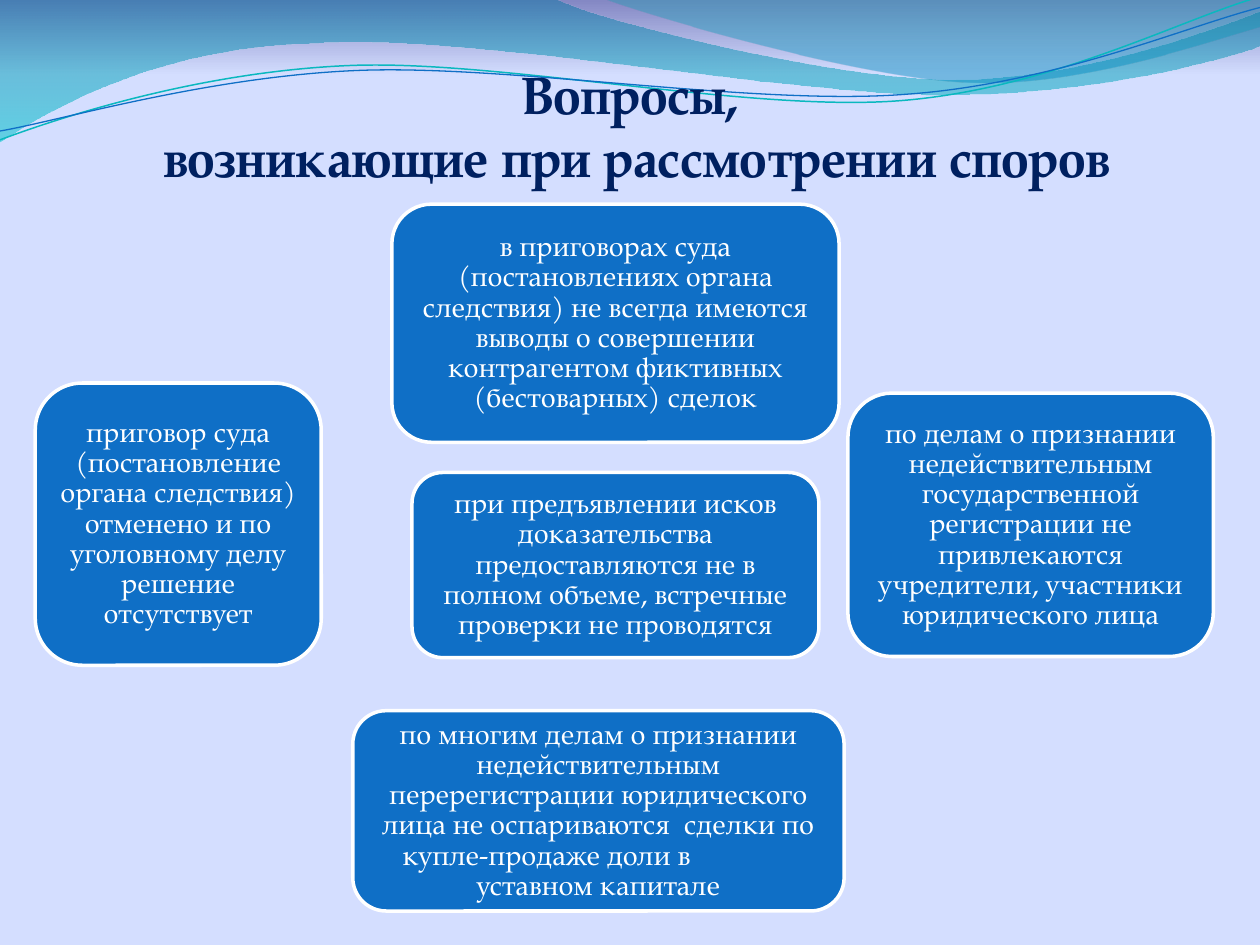
import math

import pptx
import pptx.dml.color
import pptx.enum.shapes
import pptx.enum.text
import pptx.oxml
import pptx.oxml.ns
import pptx.util

Inches = pptx.util.Inches
qn = pptx.oxml.ns.qn
SPACE = pptx.oxml.ns.nsdecls("a")
FONT = "TeX Gyre Pagella"
NAVY, BLUE, TEAL, WHITE = "002060", "0F6FC6", "0AB8BF", "FFFFFF"
TILT = 357.3
SKY = [(0, "8488C4", 100), (8, "D4DEFF", 100), (100, "D4DEFF", 100)]
BANDS = [
    ([(0, 0)], [(4.4, -0.01)],
     [(4.76, 0.17), (6.64, 0.63), (7.58, 0.63)],
     [(8.53, 0.63), (9.58, 0.26), (10, 0.09)], [(10.01, 0.36)],
     [(9.83, 0.44), (8.7, 0.76), (7.46, 0.75)],
     [(6.22, 0.75), (3.82, 0.28), (2.57, 0.34)],
     [(1.29, 0.36), (0.46, 0.83), (-0.01, 1.13)]),
    ([(4.79, -0.01)],
     [(5.09, 0.11), (6.82, 0.62), (7.69, 0.65)],
     [(8.56, 0.69), (9.61, 0.32), (10, 0.21)], [(10, 0)]),
]
SHADES = [
    [(0, "0074A1", 45), (100, "00C6CF", 55)],
    [(0, "00A1A9", 30), (80, "008BBF", 45)],
]
LINES = [
    (([(0, 1.11)],
      [(0.48, 0.93), (1.58, 0.57), (2.77, 0.52)],
      [(3.95, 0.47), (5.93, 0.89), (7.13, 0.8)],
      [(8.33, 0.71), (9.38, 0.15), (9.98, -0.02)]),
     (4.99, 0.58), TEAL, 0.85),
    (([(0, 1.04)],
      [(0.47, 0.96), (1.64, 0.61), (2.83, 0.56)],
      [(4.03, 0.51), (5.97, 0.84), (7.17, 0.75)],
      [(8.36, 0.67), (9.41, 0.21), (10, 0.06)]),
     (5, 0.59), BLUE, 0.75),
]
CARDS = [
    ((3.11, 1.62, 3.55, 1.89),
     "в приговорах суда (постановлениях органа следствия) не всегда имеются "
     "выводы о совершении контрагентом фиктивных (бестоварных) сделок"),
    ((6.73, 3.12, 2.9, 2.09),
     "по делам о признании недействительным государственной регистрации не "
     "привлекаются учредители, участники юридического лица"),
    ((3.27, 3.75, 3.23, 1.47),
     "при предъявлении исков доказательства предоставляются не в полном "
     "объеме, встречные проверки не проводятся"),
    ((2.8, 5.64, 3.9, 1.59),
     "по многим делам о признании недействительным перерегистрации "
     "юридического лица не оспариваются  сделки по купле-продаже доли в "
     "\tуставном капитале"),
    ((0.28, 3.04, 2.27, 2.24),
     "приговор суда (постановление органа следствия) отменено и по "
     "уголовному делу решение отсутствует"),
]


def tint(code):
    """Turn a hex string into a colour."""
    return pptx.dml.color.RGBColor.from_string(code)


def apply(item, **values):
    """Set each given format value on the item."""
    for name, value in values.items():
        setattr(item, name, value)


def shade(node, fill, stops):
    """Give a fill a downward gradient of (percent, colour, opacity) stops."""
    fill.gradient()
    fill.gradient_angle = 270
    group = next(node.iter(qn("a:gsLst")))
    for old in list(group):
        group.remove(old)
    for place, code, alpha in stops:
        group.append(pptx.oxml.parse_xml(
            f'<a:gs {SPACE} pos="{place * 1000}"><a:srgbClr val="{code}">'
            f'<a:alpha val="{alpha * 1000}"/></a:srgbClr></a:gs>'))


def stroke(shape, code, width):
    """Give a shape its outline."""
    shape.line.color.rgb = tint(code)
    shape.line.width = pptx.util.Pt(width)


def turn(route, pivot, angle):
    """Rotate every point of a route about a pivot."""
    cos, sin = math.cos(math.radians(angle)), math.sin(math.radians(angle))
    px, py = pivot
    return [[(px + (x - px) * cos - (y - py) * sin,
              py + (x - px) * sin + (y - py) * cos) for x, y in part]
            for part in route]


def bend(shape, route):
    """Join each three straight segments of a route into one Bezier curve."""
    steps = iter(list(shape._element.iter(qn("a:lnTo"))))
    for part in route[1:]:
        group = [next(steps) for point in part]
        if len(group) == 3:
            curve = pptx.oxml.parse_xml(f"<a:cubicBezTo {SPACE}/>")
            group[0].addprevious(curve)
            for step in group:
                curve.append(step[0])
                step.getparent().remove(step)


def outline(slide, box, route, close):
    """Draw a route from the top left corner of the box."""
    points = [(Inches(box[0] + x), Inches(box[1] + y))
              for part in route for x, y in part]
    pen = slide.shapes.build_freeform(*points[0])
    pen.add_line_segments(points[1:], close=close)
    shape = pen.convert_to_shape()
    bend(shape, route)
    shape.shadow.inherit = False
    return shape


def waves(slide, box):
    """Draw the shaded bands and thin lines of the header."""
    for route, stops in zip(BANDS, SHADES):
        band = outline(slide, box, route, True)
        shade(band._element, band.fill, stops)
        band.line.fill.background()
    for route, pivot, code, width in LINES:
        line = outline(slide, box, turn(route, pivot, -TILT), False)
        line.rotation = TILT
        line.fill.background()
        stroke(line, code, width)


def write(frame, lines, size, code, bold=False, space=1.0):
    """Fill a text frame with centred lines."""
    for index, text in enumerate(lines):
        para = frame.add_paragraph() if index else frame.paragraphs[0]
        apply(para, alignment=pptx.enum.text.PP_ALIGN.CENTER, line_spacing=space)
        run = para.add_run()
        run.text = text
        apply(run.font, name=FONT, size=pptx.util.Pt(size), bold=bold)
        run.font.color.rgb = tint(code)
        if "\t" in text:
            para._p.get_or_add_pPr().append(pptx.oxml.parse_xml(
                f'<a:tabLst {SPACE}><a:tab pos="{Inches(3.11)}" algn="l"/>'
                '</a:tabLst>'))


def title(slide, box):
    """Place the two-line heading."""
    frame = slide.shapes.add_textbox(*map(Inches, box)).text_frame
    frame.word_wrap = False
    write(frame, ["Вопросы, ", "возникающие при рассмотрении споров"],
          30, NAVY, bold=True)


def card(slide, box, text):
    """Place one rounded card with its text."""
    kind = pptx.enum.shapes.MSO_SHAPE.ROUNDED_RECTANGLE
    shape = slide.shapes.add_shape(kind, *map(Inches, box))
    shape.shadow.inherit = False
    shape.fill.solid()
    shape.fill.fore_color.rgb = tint(BLUE)
    stroke(shape, WHITE, 2)
    pad = Inches(0.07)
    apply(shape.text_frame, word_wrap=True, margin_left=pad, margin_right=pad,
          margin_top=pad, margin_bottom=pad,
          vertical_anchor=pptx.enum.text.MSO_ANCHOR.MIDDLE)
    write(shape.text_frame, [text], 16, WHITE, space=0.9)


def main():
    """Build and save the slide."""
    deck = pptx.Presentation()
    apply(deck, slide_width=Inches(10), slide_height=Inches(7.5))
    slide = deck.slides.add_slide(deck.slide_layouts[6])
    shade(slide._element, slide.background.fill, SKY)
    waves(slide, (0, 0, 10, 1.14))
    title(slide, (0.75, 0.44, 8.61, 1.11))
    for box, text in CARDS:
        card(slide, box, text)
    deck.save("out.pptx")


if __name__ == "__main__":
    main()
